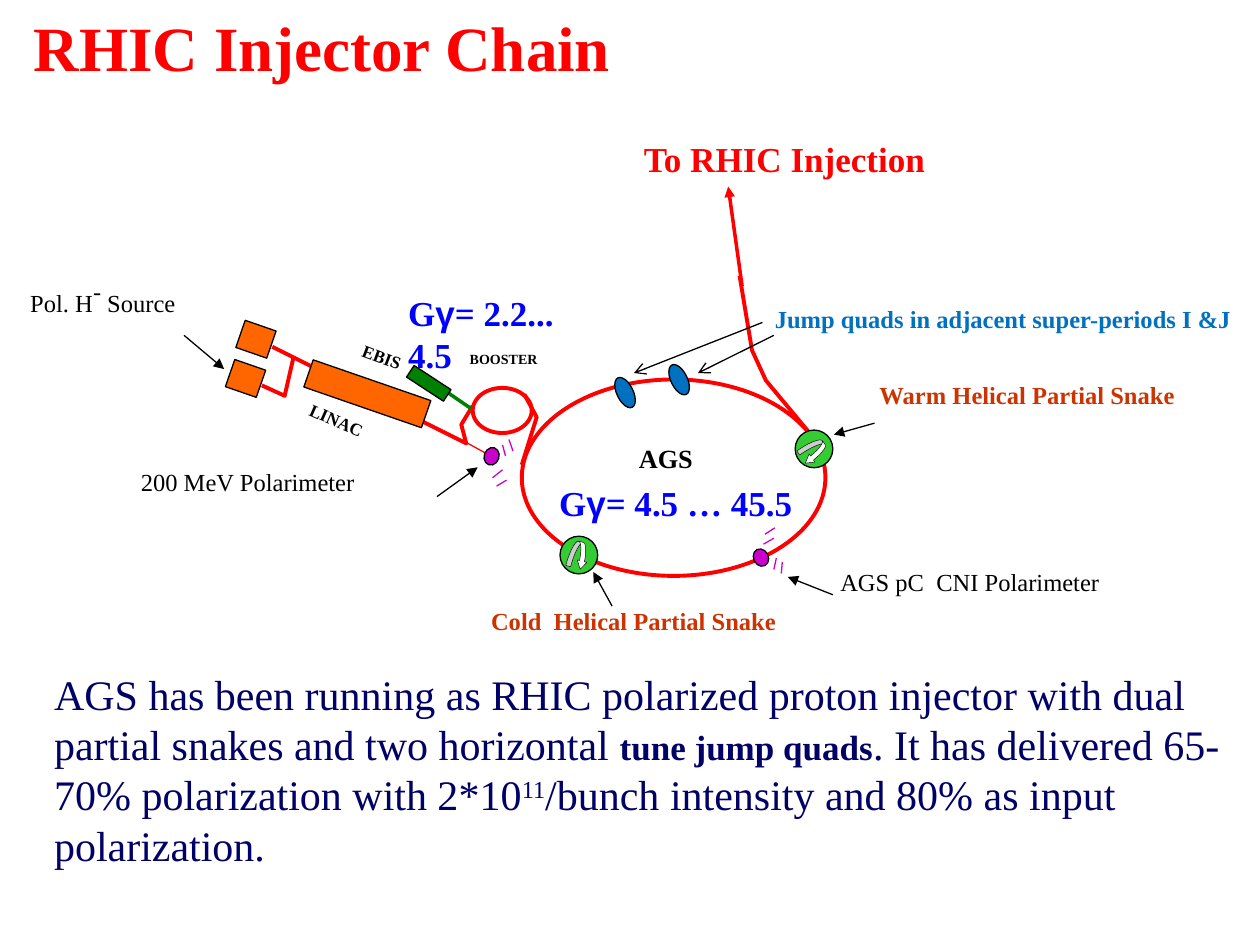
from lxml import etree
from pptx import Presentation
from pptx.dml.color import RGBColor
from pptx.enum.shapes import MSO_CONNECTOR, MSO_SHAPE
from pptx.enum.text import MSO_ANCHOR, PP_ALIGN
from pptx.oxml.ns import qn
from pptx.util import Cm, Pt

STRAIGHT = MSO_CONNECTOR.STRAIGHT
RECT = MSO_SHAPE.RECTANGLE
OVAL = MSO_SHAPE.OVAL
CURVED = MSO_SHAPE.CURVED_DOWN_ARROW
LEFT, CENTER = PP_ALIGN.LEFT, PP_ALIGN.CENTER
TOP, BOTTOM = MSO_ANCHOR.TOP, MSO_ANCHOR.BOTTOM

THEME = {
    "font": "Times New Roman", "greek": "Arial",
    "red": "FF0000", "navy": "000066", "black": "000000", "white": "FFFFFF",
    "orange": "FF6600", "purple": "CC00CC", "rust": "CC3300", "lime": "33CC33",
    "blue": "0000FF", "azure": "0070C0", "green": "008000",
    "title": 36, "body": 24, "large": 20, "ring": 15, "label": 14,
    "small": 10, "tiny": 8,
    "beam": 2.25, "transfer": 2, "thin": 0.75, "hair": 0.25,
}


def color(name):
    return RGBColor.from_string(THEME[name])


def write_runs(tf, runs, size, fill, bold, align=LEFT):
    p = tf.paragraphs[0]
    p.alignment = align
    for text, changes in runs:
        r = p.add_run()
        r.text = text
        r.font.name = THEME[changes.get("font", "font")]
        r.font.size = Pt(THEME[changes.get("size", size)])
        r.font.bold = changes.get("bold", bold)
        r.font.color.rgb = color(fill)
        if changes.get("raised"):
            r.font._element.set("baseline", "30000")


prs = Presentation()
prs.slide_width, prs.slide_height = Cm(25.4), Cm(19.05)
s = prs.slides.add_slide(prs.slide_layouts[5])

title = s.shapes.title
title.left, title.top, title.width, title.height = Cm(0.43), Cm(0), Cm(22.86), Cm(1.83)
title.text_frame.vertical_anchor = BOTTOM
write_runs(title.text_frame, [("RHIC Injector Chain", {})], "title", "red", True)

beam_paths = [
    [(9.53, 8.18), (9.3, 8.56), (9.4, 8.94), (8.48, 8.48)],
    [(5.28, 7.77), (5.74, 7.98), (5.92, 7.19)],
    [(10.57, 7.95), (10.82, 8.41), (10.52, 9.37)],
    [(16.33, 8.74), (15.44, 7.67), (15.16, 7.06), (14.91, 5.56)],
]
for path in beam_paths:
    points = [(Cm(x), Cm(y)) for x, y in path]
    builder = s.shapes.build_freeform(*points[0])
    builder.add_line_segments(points[1:], close=False)
    sp = builder.convert_to_shape()
    sp.shadow.inherit = False
    sp.fill.background()
    sp.line.color.rgb = color("red")
    sp.line.width = Pt(THEME["beam"])

lines = [
    (9.4, 8.92, 9.8, 9.14, "red", "thin", None),
    (5.49, 6.99, 6.35, 7.42, "red", "beam", None),
    (9.53, 8.26, 8.89, 7.82, "green", "transfer", None),
    (14.96, 5.77, 14.68, 3.76, "red", "transfer", "triangle"),
    (10.13, 9.47, 9.93, 9.63, "purple", "thin", None),
    (10.21, 9.68, 10.01, 9.8, "purple", "thin", None),
    (10.13, 8.97, 10.19, 9.19, "purple", "thin", None),
    (10.26, 8.86, 10.34, 9.09, "purple", "thin", None),
    (15.65, 11.25, 15.6, 11.48, "purple", "thin", None),
    (15.77, 11.33, 15.75, 11.56, "purple", "thin", None),
    (15.6, 10.85, 15.39, 10.97, "purple", "thin", None),
    (15.62, 10.64, 15.42, 10.77, "purple", "thin", None),
    (8.81, 10.01, 9.63, 9.42, "black", "thin", "triangle"),
    (3.71, 6.76, 4.52, 7.44, "black", "thin", "triangle"),
    (16.79, 11.99, 15.88, 11.63, "black", "thin", "triangle"),
    (12.34, 12.22, 11.96, 11.53, "black", "thin", "triangle"),
    (17.63, 8.53, 16.81, 8.76, "black", "thin", "triangle"),
    (15.37, 6.5, 12.78, 7.52, "black", "thin", "arrow"),
    (15.6, 6.76, 14.07, 7.52, "black", "thin", "arrow"),
]
for x1, y1, x2, y2, stroke, width, head in lines:
    cxn = s.shapes.add_connector(STRAIGHT, Cm(x1), Cm(y1), Cm(x2), Cm(y2))
    cxn.line.color.rgb = color(stroke)
    cxn.line.width = Pt(THEME[width])
    if head:
        etree.SubElement(cxn.line._get_or_add_ln(), qn("a:tailEnd"), type=head)
    etree.SubElement(cxn._element.spPr, qn("a:effectLst"))

parts = [
    (OVAL, 10.52, 7.65, 6.12, 3.96, 0, None, "red", "beam"),
    (OVAL, 9.53, 7.82, 1.19, 0.91, 0, None, "red", "beam"),
    (RECT, 4.62, 7.34, 0.66, 0.58, 19.1, "orange", "black", "thin"),
    (RECT, 4.83, 6.55, 0.66, 0.58, 19.1, "orange", "black", "thin"),
    (RECT, 6.15, 7.65, 2.51, 0.58, 19.1, "orange", "black", "thin"),
    (RECT, 8.2, 7.59, 0.89, 0.28, 33.2, "green", "black", "thin"),
    (OVAL, 9.73, 9.05, 0.36, 0.3, 108.3, "purple", "black", "thin"),
    (OVAL, 15.16, 11.09, 0.36, 0.3, 64.1, "purple", "black", "thin"),
    (OVAL, 16.03, 8.67, 0.76, 0.76, 0, "lime", "black", "thin"),
    (OVAL, 11.29, 10.81, 0.76, 0.76, 0, "lime", "black", "thin"),
    (CURVED, 16.2, 8.83, 0.4, 0.54, 55, "white", "black", "hair"),
    (CURVED, 11.47, 10.92, 0.4, 0.54, 15, "white", "black", "hair"),
    (OVAL, 13.36, 7.49, 0.66, 0.33, 64.1, "azure", "black", "thin"),
    (OVAL, 12.27, 7.75, 0.66, 0.33, 64.1, "azure", "black", "thin"),
]
for kind, x, y, w, h, angle, fill, stroke, width in parts:
    sp = s.shapes.add_shape(kind, Cm(x), Cm(y), Cm(w), Cm(h))
    sp.shadow.inherit = False
    sp.rotation = angle
    if fill:
        sp.fill.solid()
        sp.fill.fore_color.rgb = color(fill)
    else:
        sp.fill.background()
    sp.line.color.rgb = color(stroke)
    sp.line.width = Pt(THEME[width])
    if kind == CURVED:
        for i, value in enumerate((0.25, 0.5, 0.42)):
            sp.adjustments[i] = value

gamma = ("γ", {"font": "greek"})
source = [("Pol. H", {}), ("-", {"size": "body", "raised": True}), (" Source", {})]
summary = [
    ("AGS has been running as RHIC polarized proton injector with dual partial "
     "snakes and two horizontal ", {}),
    ("tune jump quads", {"size": "large", "bold": True}),
    (". It has delivered 65-70% polarization with 2*10", {}),
    ("11", {"raised": True}),
    ("/bunch intensity and 80% as input polarization.", {}),
]
tight, padded = (0, 0), (0.25, 0.13)
labels = [
    (0.84, 13.34, 24.56, 5.38, 0, padded, True, LEFT, summary, "body", "navy", False),
    (12.88, 8.92, 1.12, 0.76, 0, tight, False, LEFT, [("AGS", {})], "ring", "black", True),
    (6.2, 8.26, 1.17, 0.51, 23.9, tight, False, LEFT, [("LINAC", {})], "small", "black", True),
    (9.47, 7.06, 1.4, 0.41, 0, tight, False, LEFT, [("BOOSTER", {})], "tiny", "black", True),
    (7.19, 6.98, 1.02, 0.43, 20.8, tight, True, CENTER, [("EBIS", {})], "small", "black", True),
    (0.61, 5.46, 3.02, 0.81, 0, tight, False, LEFT, source, "label", "black", False),
    (2.84, 9.42, 4.42, 0.71, 0, tight, False, LEFT,
     [("200 MeV Polarimeter", {})], "label", "black", False),
    (16.94, 11.43, 5.36, 0.71, 0, tight, False, LEFT,
     [("AGS pC  CNI Polarimeter", {})], "label", "black", False),
    (9.65, 12.09, 7.62, 1.02, 0, padded, True, LEFT,
     [("Cold  Helical Partial Snake", {})], "label", "rust", True),
    (17.48, 7.54, 6.65, 1.02, 0, padded, False, LEFT,
     [("Warm Helical Partial Snake", {})], "label", "rust", True),
    (12.73, 2.64, 6.4, 1.32, 0, padded, False, LEFT,
     [("To RHIC Injection", {})], "large", "red", True),
    (11.02, 9.58, 5.23, 1.32, 0, padded, False, LEFT,
     [("G", {}), gamma, ("= 4.5 … 45.5", {})], "large", "blue", True),
    (7.98, 5.74, 3.9, 1.12, 0, padded, True, LEFT,
     [("G", {}), gamma, ("= 2.2... 4.5", {})], "large", "blue", True),
    (15.37, 5.99, 10.03, 1.04, 0, padded, False, LEFT,
     [("Jump quads in adjacent super-periods I &J", {})], "label", "azure", True),
]
for x, y, w, h, angle, inset, wrap, align, runs, size, fill, bold in labels:
    sp = s.shapes.add_textbox(Cm(x), Cm(y), Cm(w), Cm(h))
    sp.rotation = angle
    tf = sp.text_frame
    tf.word_wrap = wrap
    tf.vertical_anchor = TOP
    tf.margin_left = tf.margin_right = Cm(inset[0])
    tf.margin_top = tf.margin_bottom = Cm(inset[1])
    write_runs(tf, runs, size, fill, bold, align)

prs.save("out.pptx")
